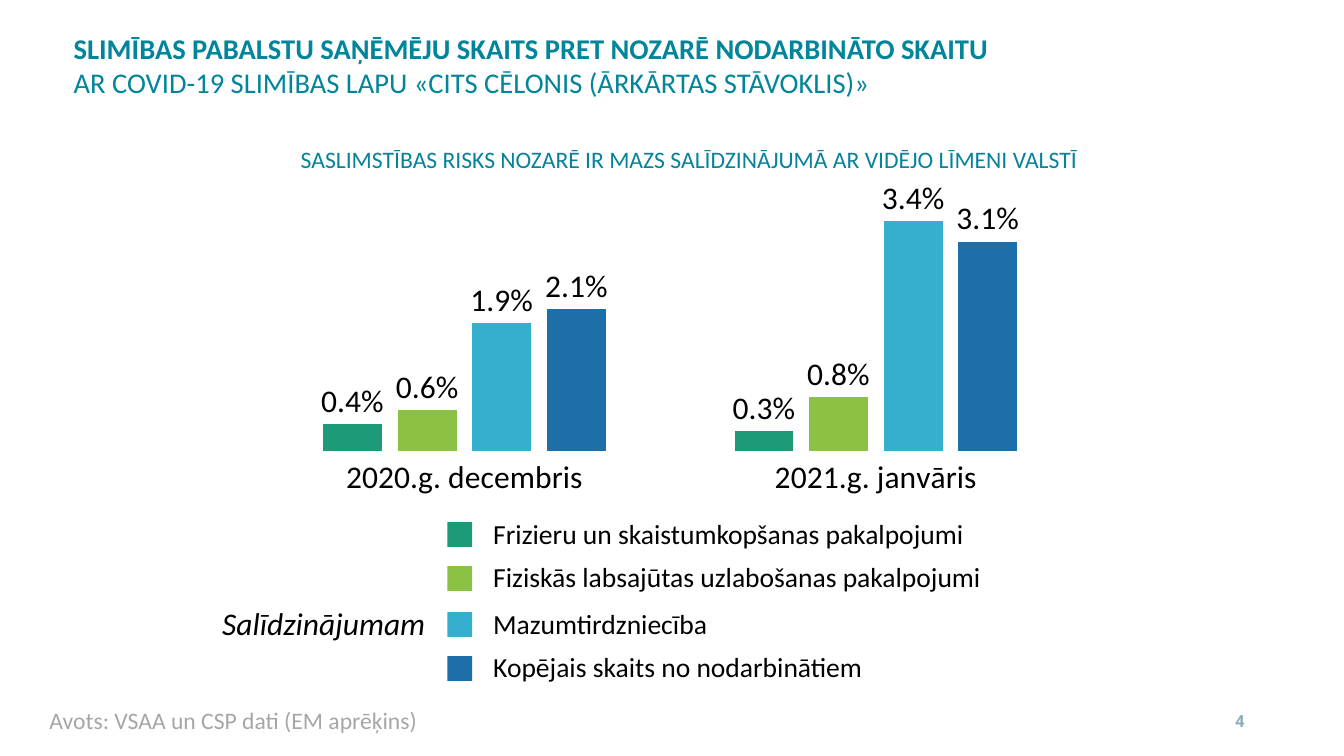
from dataclasses import dataclass
from typing import Any

from pptx import Presentation as Deck
from pptx.chart.data import CategoryChartData as Data
from pptx.dml.color import RGBColor as Rgb
from pptx.enum.chart import XL_CHART_TYPE as Kind
from pptx.enum.chart import XL_LABEL_POSITION as Spot
from pptx.enum.chart import XL_TICK_LABEL_POSITION as Place
from pptx.enum.chart import XL_TICK_MARK as Tick
from pptx.enum.shapes import MSO_SHAPE as Shape
from pptx.enum.text import MSO_ANCHOR as Anchor
from pptx.enum.text import MSO_AUTO_SIZE as Fit
from pptx.enum.text import PP_ALIGN as Align
from pptx.util import Pt

HUES = {
    "title": "00859B",
    "head": "06829A",
    "page": "8CAEBB",
    "note": "A6A6A6",
    "ink": "000000",
    "green": "1D9A78",
    "lime": "8BC145",
    "sky": "36AFCE",
    "blue": "1D6FA9",
}
PERCENT = "0.0%"
MONTHS = ("2020.g. decembris", "2021.g. janvāris")


@dataclass(frozen=True)
class Run:
    text: str
    bold: bool = False
    slant: bool = False


@dataclass(frozen=True)
class Note:
    box: tuple[float, float, float, float]
    runs: tuple[Run, ...]
    size: float
    hue: str = "ink"
    face: str = "Calibri"
    align: Any = Align.LEFT
    anchor: Any = Anchor.TOP
    fit: Any = Fit.SHAPE_TO_FIT_TEXT


@dataclass(frozen=True)
class Group:
    name: str
    hue: str
    rates: tuple[float, float]
    mark: float
    top: float
    width: float


NOTES = (
    Note((67.68, 28.08, 1290, 77.76), (
        Run("SLIMĪBAS PABALSTU SAŅĒMĒJU SKAITS PRET NOZARĒ NODARBINĀTO SKAITU", bold=True),
        Run("AR COVID-19 SLIMĪBAS LAPU «CITS CĒLONIS (ĀRKĀRTAS STĀVOKLIS)»"),
    ), 29, "title"),
    Note((964.08, 712.08, 307.44, 41.04), (Run("4", bold=True),), 17.1, "page",
         "Roboto", Align.RIGHT, Anchor.MIDDLE, Fit.NONE),
    Note((192.24, 610.56, 246.96, 46.08), (Run("Salīdzinājumam", slant=True),), 32,
         align=Align.RIGHT),
    Note((279.36, 143.28, 840.96, 36), (
        Run("SASLIMSTĪBAS RISKS NOZARĒ IR MAZS SALĪDZINĀJUMĀ AR VIDĒJO LĪMENI VALSTĪ"),
    ), 24, "head", align=Align.CENTER),
    Note((43.2, 713.52, 436.32, 36), (Run("Avots: VSAA un CSP dati (EM aprēķins)"),),
         24, "note"),
)

GROUPS = (
    Group("Frizieru un skaistumkopšanas pakalpojumi", "green", (0.004, 0.003),
          530.64, 522, 499.68),
    Group("Fiziskās labsajūtas uzlabošanas pakalpojumi", "lime", (0.006, 0.008),
          575.28, 565.92, 516.24),
    Group("Mazumtirdzniecība", "sky", (0.019, 0.034), 622.08, 613.44, 290.88),
    Group("Kopējais skaits no nodarbinātiem", "blue", (0.021, 0.031),
          666.72, 656.64, 537.84),
)


def apply(item: Any, **values: Any) -> None:
    for name, value in values.items():
        setattr(item, name, value)


def tint(hue: str) -> Rgb:
    return Rgb.from_string(HUES[hue])


def style(font: Any, size: float, hue: str = "ink", face: str = "Calibri",
          bold: bool = False, slant: bool = False) -> None:
    apply(font, size=Pt(size), name=face, bold=bold, italic=slant)
    font.color.rgb = tint(hue)


def paint(fill: Any, hue: str) -> None:
    fill.solid()
    fill.fore_color.rgb = tint(hue)


def write(slide: Any, note: Note) -> None:
    frame = slide.shapes.add_textbox(*map(Pt, note.box)).text_frame
    apply(frame, word_wrap=True, auto_size=note.fit, vertical_anchor=note.anchor)
    for index, run in enumerate(note.runs):
        para = frame.add_paragraph() if index else frame.paragraphs[0]
        para.alignment = note.align
        piece = para.add_run()
        piece.text = run.text
        style(piece.font, note.size, note.hue, note.face, run.bold, run.slant)


def add_key(slide: Any, group: Group) -> None:
    box = map(Pt, (454.32, group.mark, 25.2, 25.2))
    mark = slide.shapes.add_shape(Shape.RECTANGLE, *box)
    mark.shadow.inherit = False
    mark.line.fill.background()
    paint(mark.fill, group.hue)
    write(slide, Note((493.92, group.top, group.width, 41.04), (Run(group.name),), 28))


def add_bars(slide: Any) -> None:
    data = Data(number_format=PERCENT)
    data.categories = MONTHS
    for group in GROUPS:
        data.add_series(group.name, group.rates)
    box = map(Pt, (245.52, 177.12, 870.48, 334.8))
    chart = slide.shapes.add_chart(Kind.COLUMN_CLUSTERED, *box, data).chart
    apply(chart, has_legend=False, has_title=False)
    style(chart.font, 32)

    base = chart.category_axis
    apply(base, major_tick_mark=Tick.NONE, minor_tick_mark=Tick.NONE,
          tick_label_position=Place.LOW)
    base.format.line.fill.background()
    style(base.tick_labels.font, 32)
    apply(chart.value_axis, visible=False, has_major_gridlines=False,
          minimum_scale=0, maximum_scale=0.04)

    plot = chart.plots[0]
    apply(plot, gap_width=219, overlap=-27, vary_by_categories=False)
    for bars, group in zip(plot.series, GROUPS):
        paint(bars.format.fill, group.hue)
        labels = bars.data_labels
        apply(labels, show_value=True, number_format=PERCENT,
              number_format_is_linked=False, position=Spot.OUTSIDE_END)
        style(labels.font, 32)


def main() -> None:
    deck = Deck()
    apply(deck, slide_width=Pt(1365.12), slide_height=Pt(768.24))
    slide = deck.slides.add_slide(deck.slide_layouts[6])
    add_bars(slide)
    for group in GROUPS:
        add_key(slide, group)
    for note in NOTES:
        write(slide, note)
    deck.save("out.pptx")


if __name__ == "__main__":
    main()
